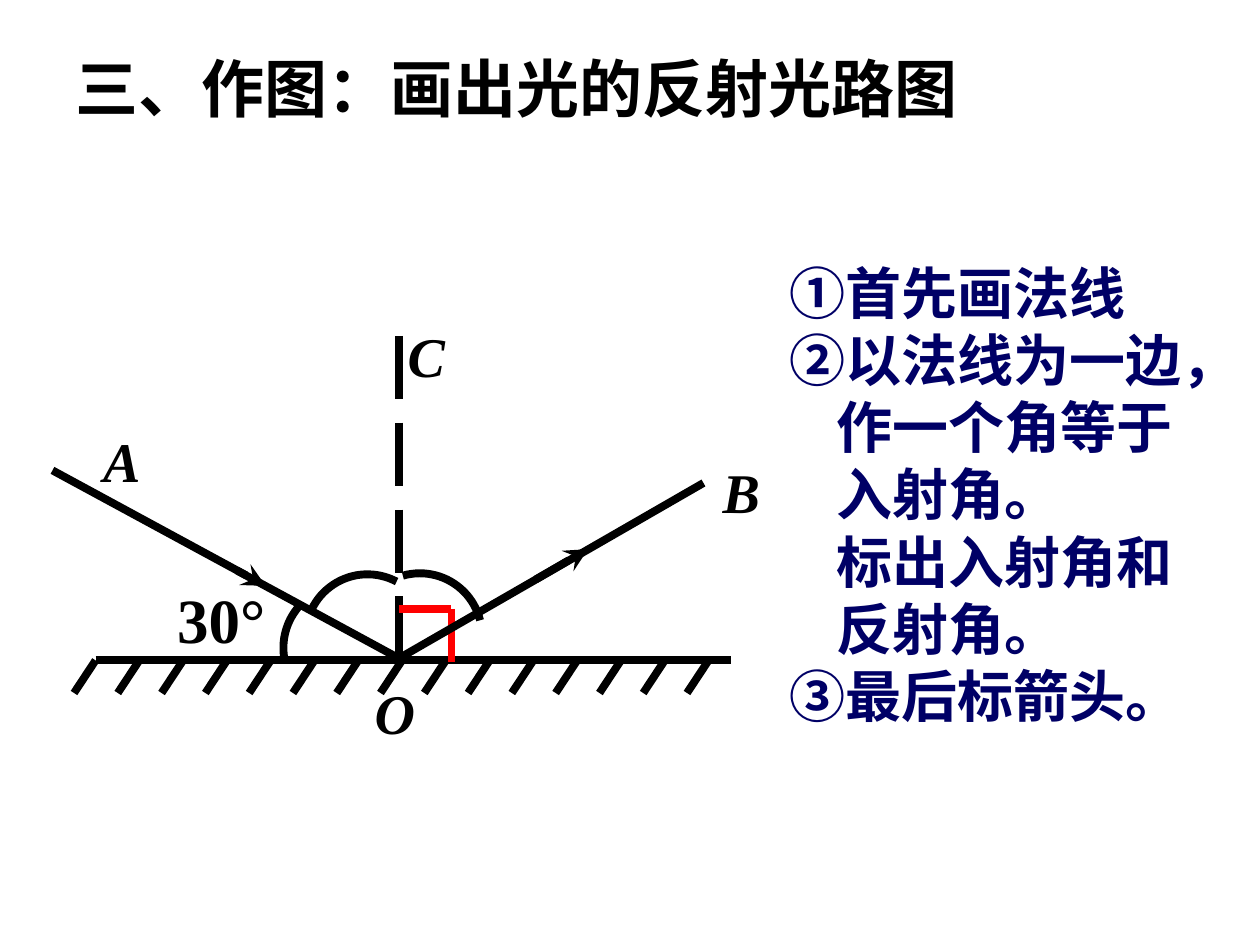
import math

from lxml import etree
from pptx import Presentation
from pptx import util as u
from pptx.dml.color import RGBColor
from pptx.enum import dml, shapes, text
from pptx.oxml import ns

BLACK = RGBColor(0x00, 0x00, 0x00)
RED = RGBColor(0xFF, 0x00, 0x00)
NAVY = RGBColor(0x00, 0x00, 0x66)


class Diagram:
    font = "Times New Roman"
    cols = 120
    stroke = u.Pt(4.5)

    def __init__(self, prs):
        self.s = prs.slides.add_slide(prs.slide_layouts[6])
        self.cell = prs.slide_width / self.cols

    def at(self, *cells):
        return [u.Emu(round(c * self.cell)) for c in cells]

    def line(self, start, end, color=BLACK, dash=None, arrow=False):
        sp = self.s.shapes.add_connector(
            shapes.MSO_CONNECTOR.STRAIGHT, *self.at(*start, *end))
        sp.line.color.rgb = color
        sp.line.width = self.stroke
        if dash:
            sp.line.dash_style = dash
        if arrow:
            ln = sp.line._get_or_add_ln()
            etree.SubElement(ln, ns.qn("a:tailEnd"), type="stealth")
        etree.SubElement(sp._element.spPr, ns.qn("a:effectLst"))

    def arc(self, center, radius, first, last, steps=24):
        x, y = center
        angles = [math.radians(first + (last - first) * i / steps)
                  for i in range(steps + 1)]
        points = [self.at(x + radius * math.cos(a), y - radius * math.sin(a))
                  for a in angles]
        outline = self.s.shapes.build_freeform(*points[0])
        outline.add_line_segments(points[1:], close=False)
        sp = outline.convert_to_shape()
        sp.shadow.inherit = False
        sp.fill.background()
        sp.line.color.rgb = BLACK
        sp.line.width = self.stroke

    def text(self, box, lines, size, color=BLACK, italic=False, wrap=True,
             align=text.PP_ALIGN.LEFT, anchor=text.MSO_ANCHOR.TOP):
        tf = self.s.shapes.add_textbox(*self.at(*box)).text_frame
        tf.word_wrap = wrap
        tf.vertical_anchor = anchor
        tf.text = "\n".join(lines)
        for p in tf.paragraphs:
            p.alignment = align
            for r in p.runs:
                r.font.name = self.font
                r.font.size = u.Pt(size)
                r.font.bold = True
                r.font.italic = italic
                r.font.color.rgb = color
                r._r.get_or_add_rPr().set("lang", "zh-CN")
        return tf

    def label(self, letter, left, top):
        self.text((left, top, 9.2, 7.6), [letter], 32, italic=True,
                  align=text.PP_ALIGN.CENTER)

    def steps(self, box, lines, indent=4.5):
        tf = self.text(box, lines, 32, NAVY)
        margin = self.at(indent)[0]
        for p in tf.paragraphs:
            p.line_spacing = u.Pt(38.4)
            numbered = p.text[0] in "①②③"
            pPr = p._p.get_or_add_pPr()
            pPr.set("marL", str(margin))
            pPr.set("indent", str(-margin if numbered else 0))

    def mirror(self, left, right, y, hatches=15, gap=4.17):
        self.line((left, y), (right, y))
        for i in range(hatches):
            x = left + i * gap
            self.line((x, y), (x - 2.05, y + 3.1))


def main():
    prs = Presentation()
    prs.slide_width, prs.slide_height = u.Inches(10), u.Inches(7.5)
    d = Diagram(prs)
    origin = (38, 62.7)

    d.mirror(9.1, 69.6, 62.9)
    d.line((38, 32), origin, dash=dml.MSO_LINE.LONG_DASH)
    for start, end in (((38, 58), (43, 58)), ((43, 58), (43, 63))):
        d.line(start, end, RED)

    d.line((5, 44.8), (25.3, 55.8), arrow=True)
    d.line((22.6, 54.35), origin)
    d.line(origin, (67, 46))
    d.line((51, 55.2), (56, 52.3), arrow=True)

    d.arc((33, 61.7), 6, 139, 188)
    d.arc((40, 60.5), 5.9, 14, 106)
    d.arc((35, 60.6), 5.9, 62, 154)

    d.text((15.7, 54.7, 14.6, 8.5), ["30°"], 36, wrap=False)
    for letter, left, top in (("O", 33, 64), ("A", 7, 40),
                              ("B", 66, 43), ("C", 36, 30)):
        d.label(letter, left, top)

    d.text((6, 3.6, 101, 9.4), ["三、作图：画出光的反射光路图"], 36,
           anchor=text.MSO_ANCHOR.MIDDLE)
    d.steps((74, 24, 40, 59.4), [
        "①首先画法线",
        "②以法线为一边，作一个角等于入射角。",
        "标出入射角和反射角。",
        "③最后标箭头。",
    ])
    prs.save("out.pptx")


if __name__ == "__main__":
    main()
